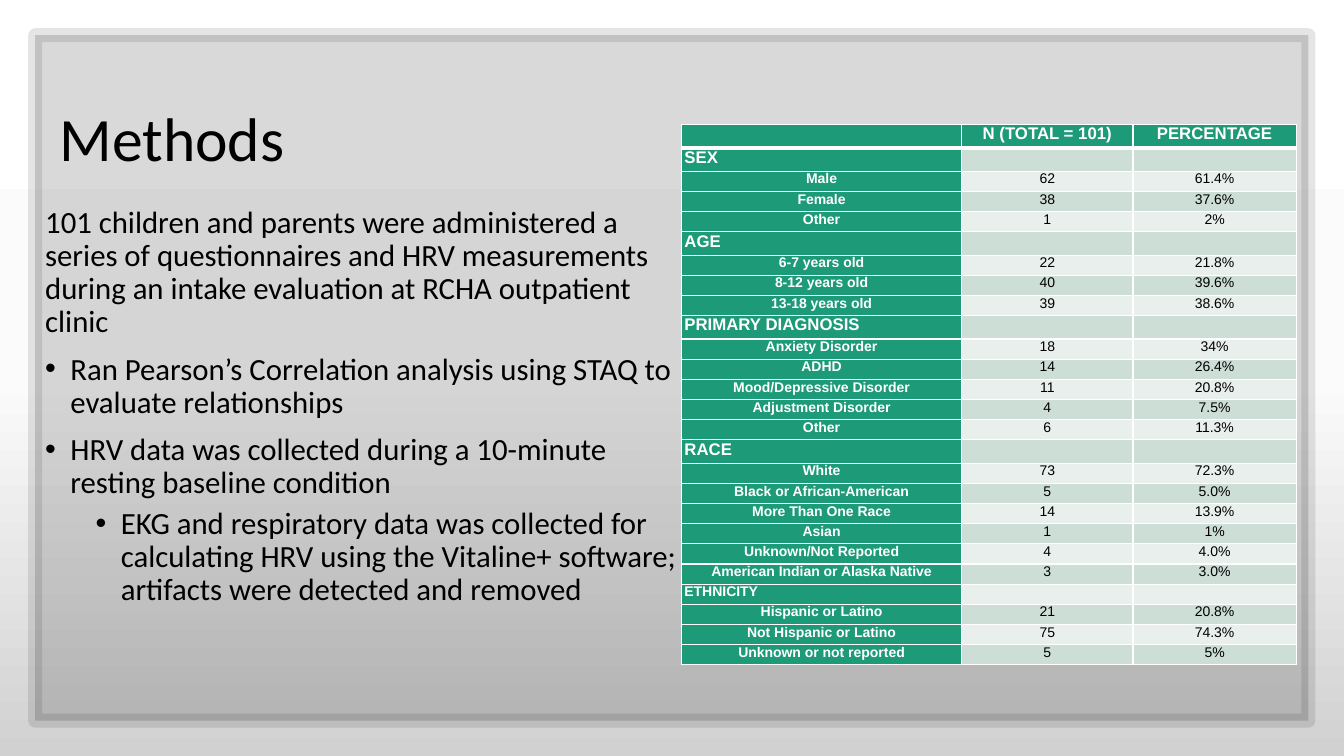
"""Build the Methods slide with its sample table."""
from copy import deepcopy
from lxml.etree import SubElement as Sub
from pptx import Presentation
from pptx.dml.color import RGBColor as Rgb
from pptx.enum.shapes import MSO_SHAPE as Shape
from pptx.enum.text import MSO_ANCHOR as Anchor, PP_ALIGN as Align
from pptx.oxml.ns import qn
from pptx.util import Pt

HUES = {"ink": "000000", "white": "FFFFFF", "mist": "FBFBFB", "grey": "D1D1D1",
        "green": "1D9A78", "dark": "CDDED6", "light": "E8EFEC"}


def write(par, text, size, face, hue="ink", bold=False):
    """Add one styled run."""
    run = par.add_run()
    run.text = text
    font = run.font
    font.size, font.name, font.bold = Pt(size), face, bold
    font.color.rgb = Rgb.from_string(HUES[hue])


def edge(cell, side, width):
    """Give one side of a cell a white border."""
    line = Sub(cell._tc.get_or_add_tcPr(), qn("a:ln" + side), w=str(Pt(width)))
    Sub(Sub(line, qn("a:solidFill")), qn("a:srgbClr"), val=HUES["white"])


deck = Presentation()
deck.slide_width, deck.slide_height = Pt(960), Pt(540)
slide = deck.slides.add_slide(deck.slide_layouts[5])

back = slide.background.fill
back.gradient()
back.gradient_angle = 270
first = slide.element.find(".//" + qn("a:gs"))
first.addnext(deepcopy(first))
for stop, (spot, hue) in zip(back.gradient_stops, [(0, "white"), (0.5, "mist"), (1, "grey")]):
    stop.position = spot
    stop.color.rgb = Rgb.from_string(HUES[hue])

title = slide.shapes.title
title.left, title.top, title.width, title.height = Pt(35.3), Pt(49), Pt(828), Pt(104.4)
title.text_frame.vertical_anchor = Anchor.MIDDLE
head = title.text_frame.paragraphs[0]
head.alignment, head.line_spacing = Align.LEFT, 0.9
write(head, "Methods", 44, "Calibri")

frame = slide.shapes.add_shape(Shape.RECTANGLE, Pt(25.2), Pt(25.2), Pt(909.4), Pt(489.6))
frame.shadow.inherit = False
frame.line.width = Pt(10)
for fill in (frame.fill, frame.line.fill):
    fill.solid()
    fill.fore_color.rgb = Rgb.from_string(HUES["ink"])
tints = frame.element.spPr.findall(".//" + qn("a:srgbClr"))
for tint, alpha in zip(tints, (15, 10)):
    Sub(tint, qn("a:alpha"), val=str(alpha * 1000))
title.element.addprevious(frame.element)

NOTES = [
    (0, 0, 10, "101 children and parents were administered a series of questionnaires and HRV "
               "measurements during an intake evaluation at RCHA outpatient clinic"),
    (0, 18, 10, "Ran Pearson’s Correlation analysis using STAQ to evaluate relationships"),
    (0, 18, 10, "HRV data was collected during a 10-minute resting baseline condition"),
    (1, 54, 5, "EKG and respiratory data was collected for calculating HRV using the Vitaline+ "
               "software; artifacts were detected and removed"),
]
body = slide.shapes.add_textbox(Pt(25.2), Pt(144), Pt(467.3), Pt(383.8)).text_frame
body.word_wrap = True
for i, (level, left, gap, text) in enumerate(NOTES):
    par = body.add_paragraph() if i else body.paragraphs[0]
    par.level, par.line_spacing, par.space_before = level, 0.9, Pt(gap)
    if left:
        props = par._p.get_or_add_pPr()
        props.set("marL", str(Pt(left)))
        props.set("indent", str(Pt(-18)))
        Sub(props, qn("a:buFont"), typeface="Arial")
        Sub(props, qn("a:buChar"), char="•")
    write(par, text, 22, "Calibri")

ROWS = [
    ("", "N (TOTAL = 101)", "PERCENTAGE"),
    ("SEX",),
    ("Male", "62", "61.4%"),
    ("Female", "38", "37.6%"),
    ("Other", "1", "2%"),
    ("AGE",),
    ("6-7 years old", "22", "21.8%"),
    ("8-12 years old", "40", "39.6%"),
    ("13-18 years old", "39", "38.6%"),
    ("PRIMARY DIAGNOSIS",),
    ("Anxiety Disorder", "18", "34%"),
    ("ADHD", "14", "26.4%"),
    ("Mood/Depressive Disorder", "11", "20.8%"),
    ("Adjustment Disorder", "4", "7.5%"),
    ("Other", "6", "11.3%"),
    ("RACE",),
    ("White", "73", "72.3%"),
    ("Black or African-American", "5", "5.0%"),
    ("More Than One Race", "14", "13.9%"),
    ("Asian", "1", "1%"),
    ("Unknown/Not Reported", "4", "4.0%"),
    ("American Indian or Alaska Native", "3", "3.0%"),
    ("ETHNICITY",),
    ("Hispanic or Latino", "21", "20.8%"),
    ("Not Hispanic or Latino", "75", "74.3%"),
    ("Unknown or not reported", "5", "5%"),
]
table = slide.shapes.add_table(len(ROWS), 3, Pt(486.7), Pt(89), Pt(439.2), Pt(385.9)).table
for col, width in zip(table.columns, (200.2, 122.4, 116.6)):
    col.width = Pt(width)
for r, row in enumerate(ROWS):
    group = len(row) == 1
    large = r == 0 or group and row[0] != "ETHNICITY"
    size = 12 if large else 10
    table.rows[r].height = Pt(16.7 if large else 14.4)
    for c in range(3):
        cell = table.cell(r, c)
        cell.margin_left = cell.margin_right = Pt(2.2)
        cell.margin_top = cell.margin_bottom = 0
        for side in "LRTB":
            thick = (r, side) in ((0, "B"), (1, "T"))
            edge(cell, side, 3 if thick else 1)
        label = r == 0 or c == 0
        cell.fill.solid()
        hue = "green" if label else "dark" if r % 2 else "light"
        cell.fill.fore_color.rgb = Rgb.from_string(HUES[hue])
        par = cell.text_frame.paragraphs[0]
        par.alignment = Align.LEFT if group else Align.CENTER
        if c < len(row) and row[c]:
            write(par, row[c], size, "Arial", "white" if label else "ink", label)
        else:
            Sub(par._p, qn("a:endParaRPr"), sz=str(size * 100))

deck.save("out.pptx")
